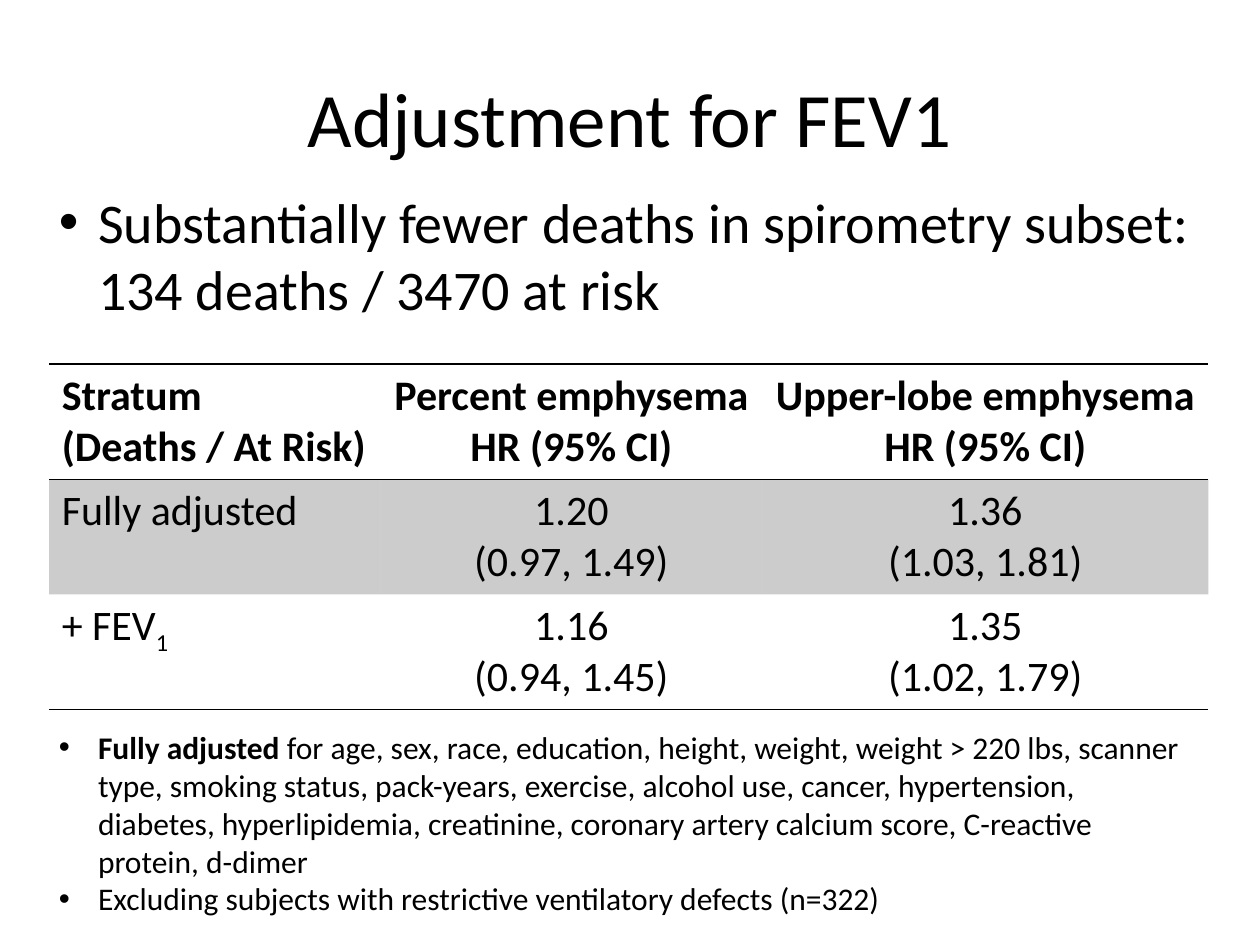
from lxml.etree import SubElement as Sub
from pptx import Presentation
from pptx.dml.color import RGBColor as RGB
from pptx.enum.text import MSO_ANCHOR as Anchor, PP_ALIGN as Align
from pptx.oxml import parse_xml
from pptx.oxml.ns import nsdecls, qn
from pptx.util import Inches, Pt

HUES = {"ink": "000000"}
HEAD = [
    ["Stratum", "(Deaths / At Risk)"],
    ["Percent emphysema", "HR (95% CI)"],
    ["Upper-lobe emphysema", "HR (95% CI)"],
]
ROWS = [
    [["Fully adjusted"], ["1.20", "(0.97, 1.49)"], ["1.36", "(1.03, 1.81)"]],
    [[[("+ FEV", {}), ("1", {"base": -25})]],
     ["1.16", "(0.94, 1.45)"], ["1.35", "(1.02, 1.79)"]],
]
NOTES = [
    [("Fully adjusted ", {"bold": True}),
     ("for age, sex, race, education, height, weight, weight > 220 lbs, "
      "scanner type, smoking status, pack-years, exercise, alcohol use, "
      "cancer, hypertension, diabetes, hyperlipidemia, creatinine, coronary "
      "artery calcium score, C-reactive protein, d-dimer", {})],
    "Excluding subjects with restrictive ventilatory defects (n=322)",
]


def write(frame, lines, size=24, bold=False, align=Align.LEFT, bullet=False):
    """Fill a text frame with lines, each a string or a list of styled runs."""
    frame.word_wrap = True
    for i, line in enumerate(lines):
        para = frame.paragraphs[0] if i == 0 else frame.add_paragraph()
        para.alignment = align
        if bullet:
            props = para._p.get_or_add_pPr()
            props.set("marL", str(Inches(0.31)))
            props.set("indent", str(-Inches(0.31)))
            Sub(props, qn("a:buFont")).set("typeface", "Arial")
            Sub(props, qn("a:buChar")).set("char", "•")
        for text, look in [(line, {})] if isinstance(line, str) else line:
            run = para.add_run()
            run.text = text
            font = run.font
            font.name, font.size = "Calibri", Pt(size)
            font.bold = look.get("bold", bold)
            font.color.rgb = RGB.from_string(HUES["ink"])
            if "base" in look:
                font._element.set("baseline", str(look["base"] * 1000))


class Deck:
    """Holds the style and the current slide, on a grid of 100 by 75 units."""

    def __init__(self):
        self.show = Presentation()
        self.show.slide_width, self.show.slide_height = Inches(10), Inches(7.5)
        self.slide = self.show.slides.add_slide(self.show.slide_layouts[5])

    def grid(self, *units):
        return [int(self.show.slide_width * n / 100) for n in units]

    def title(self, text, *box):
        shape = self.slide.shapes.title
        shape.left, shape.top, shape.width, shape.height = self.grid(*box)
        shape.text_frame.vertical_anchor = Anchor.MIDDLE
        write(shape.text_frame, [text], size=44, align=Align.CENTER)

    def list(self, lines, size, *box):
        shape = self.slide.shapes.add_textbox(*self.grid(*box))
        write(shape.text_frame, lines, size=size, bullet=True)

    def rule(self, cell, sides):
        props = cell._tc.get_or_add_tcPr()
        ink = f'<a:solidFill><a:srgbClr val="{HUES["ink"]}"/></a:solidFill>'
        for i, side in enumerate("LRTB"):
            fill = ink if side in sides else "<a:noFill/>"
            props.insert(i, parse_xml(
                f'<a:ln{side} {nsdecls("a")} w="{Pt(1)}">{fill}</a:ln{side}>'))

    def shade(self, cell, share):
        cell.fill.solid()
        cell.fill.fore_color.rgb = RGB.from_string(HUES["ink"])
        tone = cell._tc.tcPr.find(".//" + qn("a:srgbClr"))
        Sub(tone, qn("a:alpha")).set("val", str(share * 1000))

    def table(self, rows, cols, left, top, high):
        box = self.grid(left, top, sum(cols), high * len(rows))
        table = self.slide.shapes.add_table(len(rows), len(cols), *box).table
        table.first_row = table.horz_banding = False
        for col, wide in zip(table.columns, self.grid(*cols)):
            col.width = wide
        for r, row in enumerate(rows):
            for c, lines in enumerate(row):
                cell = table.cell(r, c)
                write(cell.text_frame, lines, bold=r == 0,
                      align=Align.CENTER if c else Align.LEFT)
                if r == 0 and c:
                    cell.vertical_anchor = Anchor.MIDDLE
                if r == 1:
                    self.shade(cell, 20)
                else:
                    cell.fill.background()
                self.rule(cell, ("TB", "T", "B")[r])


def main():
    deck = Deck()
    deck.title("Adjustment for FEV1", 5, 3, 90, 12.5)
    deck.table([HEAD, *ROWS], [26.3, 30.3, 35.4], 3.9, 28.9, 9.1)
    deck.list(NOTES, 18, 3.7, 57.3, 92, 16.2)
    deck.list(["Substantially fewer deaths in spirometry subset: "
               "134 deaths / 3470 at risk"], 32, 3.7, 14.4, 92, 11.8)
    deck.show.save("out.pptx")


if __name__ == "__main__":
    main()
